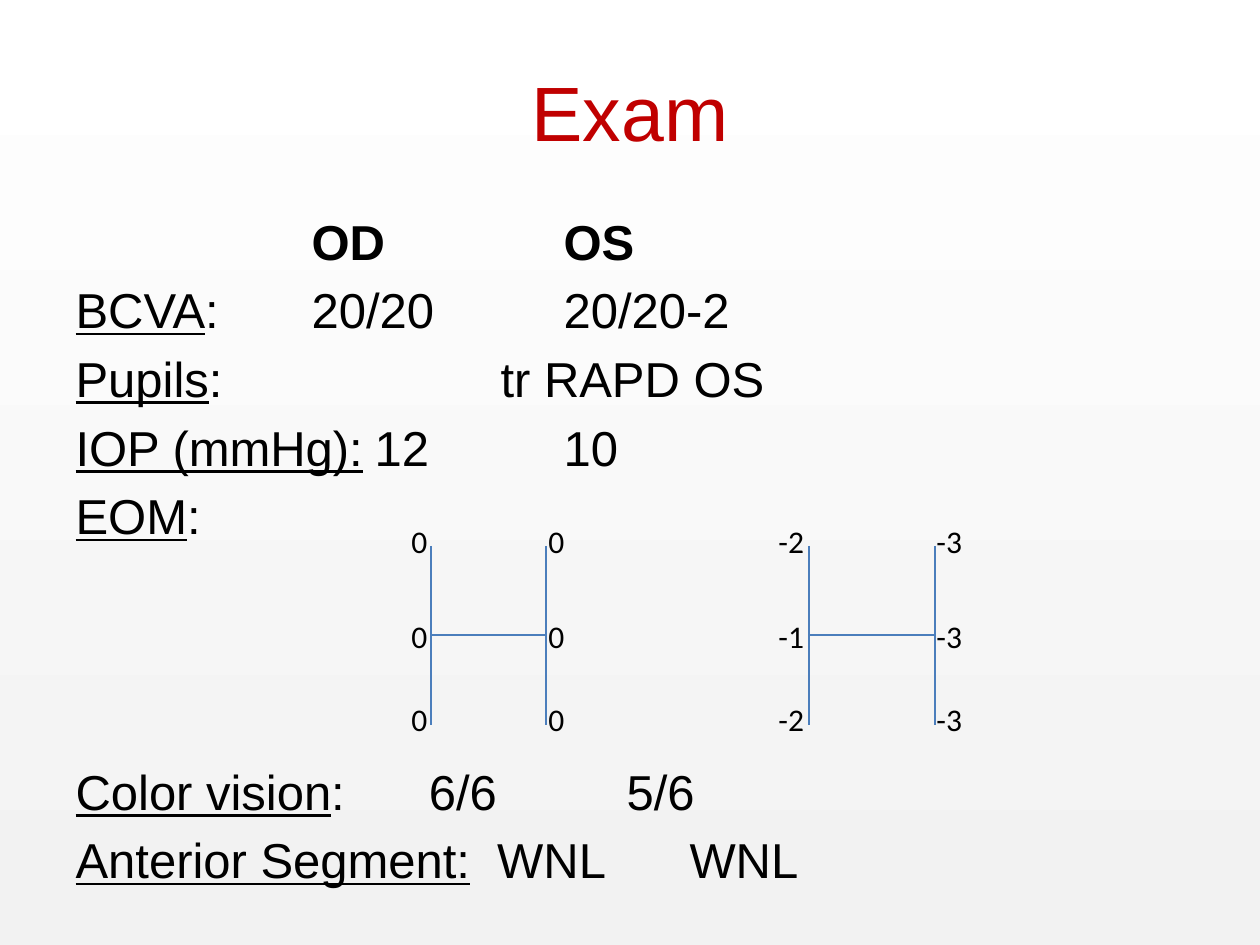
from dataclasses import dataclass

from lxml.etree import SubElement
from pptx import Presentation
from pptx.dml.color import RGBColor
from pptx.enum.shapes import MSO_CONNECTOR, MSO_SHAPE
from pptx.enum.text import MSO_ANCHOR, MSO_AUTO_SIZE, PP_ALIGN
from pptx.oxml.ns import qn
from pptx.util import Emu, Pt


@dataclass(frozen=True)
class Theme:
    title: RGBColor = RGBColor(0xC0, 0x00, 0x00)
    text: RGBColor = RGBColor(0x00, 0x00, 0x00)
    line: RGBColor = RGBColor(0x4B, 0x7E, 0xBC)
    bg_bottom: RGBColor = RGBColor(0xF2, 0xF2, 0xF2)
    bg_top: RGBColor = RGBColor(0xFF, 0xFF, 0xFF)
    font: str = "Arial"
    label_font: str = "Calibri"
    title_pt: int = 44
    body_pt: int = 28
    label_pt: int = 18
    line_pt: float = 0.75


THEME = Theme()
WIDTH, HEIGHT = 1260, 945
HANGING = 47  # default tab stops are counted from here
LINE_GAP, DIAGRAM_GAP = 5.6, 123.8  # points before a paragraph

# underlined label, text up to the value, extra points before the value,
# value and the rest of the line, space before
FINDINGS = [
    ("", "\t\t\t\t", 0, "OD\t\t\tOS", 0),
    ("BCVA", ":\t\t", 0, "20/20\t\t\t20/20-2", LINE_GAP),
    ("Pupils", ": \t\t\t\t\t", 0, "tr RAPD OS", LINE_GAP),
    ("IOP (mmHg):", "\t", 0, "12\t\t\t10", LINE_GAP),
    ("EOM", ":", 0, "", LINE_GAP),
    ("Color vision", ":\t", 23.3, "6/6\t\t\t5/6", DIAGRAM_GAP),
    ("Anterior Segment:", "", 7.8, "WNL\t\tWNL", LINE_GAP),
]

# x of both uprights, x of both label columns, labels by row
MOTILITY = [
    ((431, 546), (399, 536), (("0", "0"), ("0", "0"), ("0", "0"))),
    ((809, 935), (766, 924), (("-2", "-3"), ("-1", "-3"), ("-2", "-3"))),
]
H_TOP, H_MIDDLE, H_BOTTOM = 546, 635, 725
LABEL_ROWS = (516, 611, 694)


def px(n):
    return Emu(round(n * 914400 / 126))


def place(sp, left, top, width, height):
    sp.left, sp.top, sp.width, sp.height = map(px, (left, top, width, height))


def style_run(r, font, size, color):
    r.font.name = font
    r.font.size = Pt(size)
    r.font.color.rgb = color


def add_backdrop(s):
    sp = s.shapes.add_shape(MSO_SHAPE.RECTANGLE, 0, 0, px(WIDTH), px(HEIGHT))
    sp.shadow.inherit = False
    sp.line.fill.background()
    sp.fill.gradient()
    sp.fill.gradient_angle = 90
    for stop, color in zip(sp.fill.gradient_stops, (THEME.bg_bottom, THEME.bg_top)):
        stop.color.rgb = color
    s.shapes.title._element.addprevious(sp._element)


def set_title(sp, text):
    place(sp, 63, 32, 1134, 157)
    tf = sp.text_frame
    tf.text = text
    tf.vertical_anchor = MSO_ANCHOR.MIDDLE
    p = tf.paragraphs[0]
    p.alignment = PP_ALIGN.CENTER
    style_run(p.runs[0], THEME.font, THEME.title_pt, THEME.title)


def set_hanging(p):
    """Replace the bullet by a plain hanging indent."""
    pPr = p._p.get_or_add_pPr()
    pPr.set("marL", str(px(HANGING)))
    pPr.set("indent", str(-px(HANGING)))
    SubElement(pPr, qn("a:buNone"))


def add_body_run(p, text, bold=False, underline=False):
    r = p.add_run()
    r.text = text
    style_run(r, THEME.font, THEME.body_pt, THEME.text)
    r.font.bold = bold
    r.font.underline = underline
    return r


def add_finding(p, label, lead, extra, values, gap):
    set_hanging(p)
    p.space_before = Pt(gap)
    if label:
        add_body_run(p, label, underline=True)
    if extra:
        if lead:
            add_body_run(p, lead)
        spacer = add_body_run(p, " ")
        spacer.font._element.set("spc", str(round(extra * 100)))
        add_body_run(p, values)
    else:
        add_body_run(p, lead + values, bold=not label)


def set_findings(sp):
    place(sp, 63, 199, 1155, 740)
    tf = sp.text_frame
    tf.auto_size = MSO_AUTO_SIZE.NONE
    tf.margin_top = px(12)
    for i, finding in enumerate(FINDINGS):
        p = tf.add_paragraph() if i else tf.paragraphs[0]
        add_finding(p, *finding)


def add_line(s, x1, y1, x2, y2):
    line = s.shapes.add_connector(MSO_CONNECTOR.STRAIGHT, *map(px, (x1, y1, x2, y2)))
    line.line.color.rgb = THEME.line
    line.line.width = Pt(THEME.line_pt)
    SubElement(line._element.spPr, qn("a:effectLst"))


def add_label(s, x, y, text):
    tf = s.shapes.add_textbox(*map(px, (x, y, 63, 50))).text_frame
    tf.word_wrap = True
    tf.text = text
    style_run(tf.paragraphs[0].runs[0], THEME.label_font, THEME.label_pt, THEME.text)


def add_motility(s, uprights, label_columns, rows):
    """Draw the H diagram of one eye with its six gaze grades."""
    for x in uprights:
        add_line(s, x, H_TOP, x, H_BOTTOM)
    add_line(s, uprights[0], H_MIDDLE, uprights[1], H_MIDDLE)
    for y, grades in zip(LABEL_ROWS, rows):
        for x, grade in zip(label_columns, grades):
            add_label(s, x, y, grade)


def main():
    prs = Presentation()
    prs.slide_width, prs.slide_height = px(WIDTH), px(HEIGHT)
    s = prs.slides.add_slide(prs.slide_layouts[1])
    add_backdrop(s)
    set_title(s.shapes.title, "Exam")
    set_findings(s.placeholders[1])
    for eye in MOTILITY:
        add_motility(s, *eye)
    prs.save("out.pptx")


if __name__ == "__main__":
    main()
